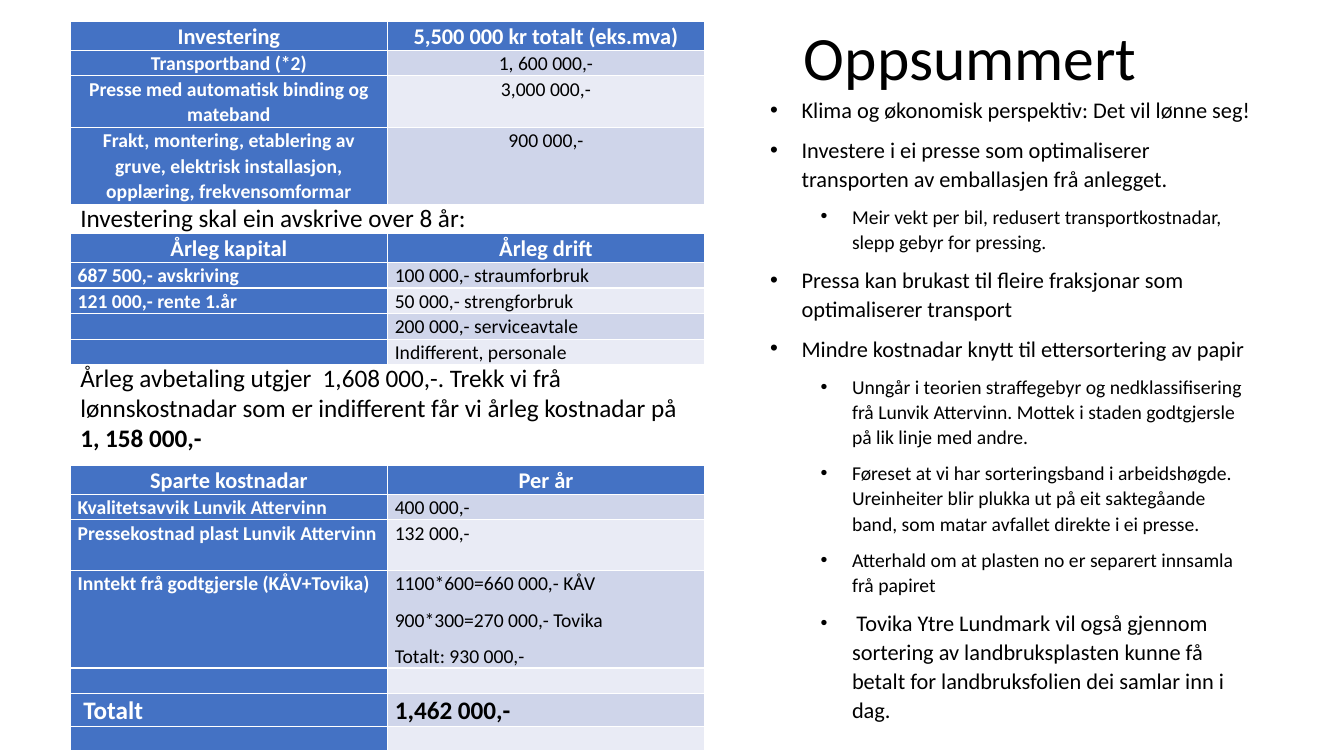
import pptx
import pptx.dml.color
import pptx.enum.text
import pptx.util
from lxml import etree
from pptx.oxml.ns import qn

RGBColor = pptx.dml.color.RGBColor
BLUE = RGBColor(0x44, 0x72, 0xC4)
BANDS = (RGBColor(0xE9, 0xEB, 0xF5), RGBColor(0xCF, 0xD5, 0xEA))
WHITE = RGBColor(0xFF, 0xFF, 0xFF)
BLACK = RGBColor(0, 0, 0)

FONT = "Calibri"
LEFT = 67
COLUMN_WIDTH = 302
CENTER = pptx.enum.text.PP_ALIGN.CENTER
START = pptx.enum.text.PP_ALIGN.LEFT
LOOSE = {"line_spacing": 1.07, "space_after": pptx.util.Pt(8)}

INVESTMENT = [
    (27, "Investering", "5,500 000 kr totalt (eks.mva)"),
    (24, "Transportband (*2)", "1, 600 000,-"),
    (49, "Presse med automatisk binding og mateband", "3,000 000,-"),
    (74, "Frakt, montering, etablering av gruve, elektrisk installasjon, "
         "opplæring, frekvensomformar", "900 000,-"),
]
YEARLY = [
    (28, "Årleg kapital", "Årleg drift"),
    (24, "687 500,- avskriving", "100 000,- straumforbruk"),
    (24, "121 000,- rente 1.år", "50 000,- strengforbruk"),
    (24, "", "200 000,- serviceavtale"),
    (24, "", "Indifferent, personale"),
]
SAVINGS = [
    (28, "Sparte kostnadar", "Per år"),
    (23, "Kvalitetsavvik Lunvik Attervinn", "400 000,-"),
    (48, "Pressekostnad plast Lunvik Attervinn", "132 000,-"),
    (93, "Inntekt frå godtgjersle (KÅV+Tovika)",
     "1100*600=660 000,- KÅV\n900*300=270 000,- Tovika\nTotalt: 930 000,-"),
    (24, "", ""),
    (32, " Totalt", "1,462 000,-"),
    (23, "", ""),
]
# Level, then (text, size) runs
SUMMARY = [
    (0, ("Klima og økonomisk perspektiv: Det vil lønne seg!", 16)),
    (0, ("Investere i ei presse som optimaliserer transporten av emballasjen frå anlegget.", 16)),
    (1, ("Meir vekt per bil, redusert transportkostnadar, slepp gebyr for pressing.", 14)),
    (0, ("Pressa kan brukast til fleire fraksjonar som optimaliserer transport", 16)),
    (0, ("Mindre kostnadar knytt til ettersortering av papir", 16)),
    (1, ("Unngår i teorien straffegebyr og nedklassifisering frå Lunvik Attervinn. "
         "Mottek i staden godtgjersle på lik linje med andre.", 14)),
    (1, ("Føreset at vi har sorteringsband i arbeidshøgde. Ureinheiter blir plukka ut "
         "på eit saktegåande band, som matar avfallet direkte i ei presse.", 14)),
    (1, ("Atterhald om at plasten no er separert innsamla frå papiret", 14)),
    (1, (" ", 14), ("Tovika Ytre Lundmark vil også gjennom sortering av landbruksplasten "
                    "kunne få betalt for landbruksfolien dei samlar inn i dag.", 16)),
]


def px(length):
    return pptx.util.Emu(length * 9525)


def set_all(target, values):
    for name, value in values.items():
        setattr(target, name, value)


def add_run(paragraph, text, size, color=BLACK, bold=False):
    run = paragraph.add_run()
    run.text = text
    set_all(run.font, {"name": FONT, "size": pptx.util.Pt(size), "bold": bold})
    run.font.color.rgb = color


def fill_cell(cell, text, size, align, color, bold, fill):
    set_all(cell, {"margin_left": px(7), "margin_right": px(7),
                   "margin_top": 0, "margin_bottom": 0})
    cell.fill.solid()
    cell.fill.fore_color.rgb = fill
    frame = cell.text_frame
    for index, line in enumerate(text.split("\n")):
        paragraph = frame.add_paragraph() if index else frame.paragraphs[0]
        set_all(paragraph, {"alignment": align, **LOOSE})
        if line:
            add_run(paragraph, line, size, color, bold)
        else:
            etree.SubElement(paragraph._p, qn("a:endParaRPr"), sz=str(size * 100))


def add_cost_table(slide, top, rows, body_align=START, total_row=None):
    """Add a two-column table with a blue header row and label column."""
    table = slide.shapes.add_table(len(rows), 2, px(LEFT), px(top), px(2 * COLUMN_WIDTH),
                                   px(sum(row[0] for row in rows))).table
    table.first_col = True
    for column in table.columns:
        column.width = px(COLUMN_WIDTH)
    for index, (height, *texts) in enumerate(rows):
        table.rows[index].height = px(height)
        header, total = index == 0, index == total_row
        size = 16 if header else 18 if total else 14
        for side, text in enumerate(texts):
            label = header or side == 0
            fill_cell(table.cell(index, side), text, size,
                      CENTER if header else body_align,
                      WHITE if label else BLACK, label or total,
                      BLUE if label else BANDS[index % 2])


def add_text_frame(slide, left, top, width, height):
    frame = slide.shapes.add_textbox(px(left), px(top), px(width), px(height)).text_frame
    frame.word_wrap = True
    return frame


def add_note(slide, top, width, height, text, result=""):
    paragraph = add_text_frame(slide, LEFT, top, width, height).paragraphs[0]
    add_run(paragraph, text, 18)
    if result:
        add_run(paragraph, result, 18, bold=True)


def add_summary(slide):
    frame = add_text_frame(slide, 724, 85, 477, 682)
    for index, (level, *runs) in enumerate(SUMMARY):
        paragraph = frame.add_paragraph() if index else frame.paragraphs[0]
        set_all(paragraph, {"level": level, **LOOSE})
        properties = paragraph._p.get_or_add_pPr()
        properties.set("marL", str(px(30 + 48 * level)))
        properties.set("indent", str(px(-30)))
        etree.SubElement(properties, qn("a:buFont"), typeface="Arial")
        etree.SubElement(properties, qn("a:buChar"), char="•")
        for text, size in runs:
            add_run(paragraph, text, size)


def set_title(slide, text):
    title = slide.shapes.title
    set_all(title, {"left": px(756), "top": px(14), "width": px(414), "height": px(88)})
    title.text_frame.vertical_anchor = pptx.enum.text.MSO_ANCHOR.MIDDLE
    paragraph = title.text_frame.paragraphs[0]
    set_all(paragraph, {"alignment": START, "line_spacing": 0.9})
    add_run(paragraph, text, 44)


def main():
    deck = pptx.Presentation()
    set_all(deck, {"slide_width": px(1280), "slide_height": px(720)})
    slide = deck.slides.add_slide(deck.slide_layouts[5])
    set_title(slide, "Oppsummert")
    add_cost_table(slide, 20, INVESTMENT, body_align=CENTER)
    add_cost_table(slide, 222, YEARLY)
    add_note(slide, 188, 560, 68, "Investering skal ein avskrive over 8 år:")
    add_note(slide, 340, 604, 126,
             "Årleg avbetaling utgjer  1,608 000,-. Trekk vi frå lønnskostnadar "
             "som er indifferent får vi årleg kostnadar på ", "1, 158 000,-")
    add_cost_table(slide, 443, SAVINGS, total_row=5)
    add_summary(slide)
    deck.save("out.pptx")


if __name__ == "__main__":
    main()
